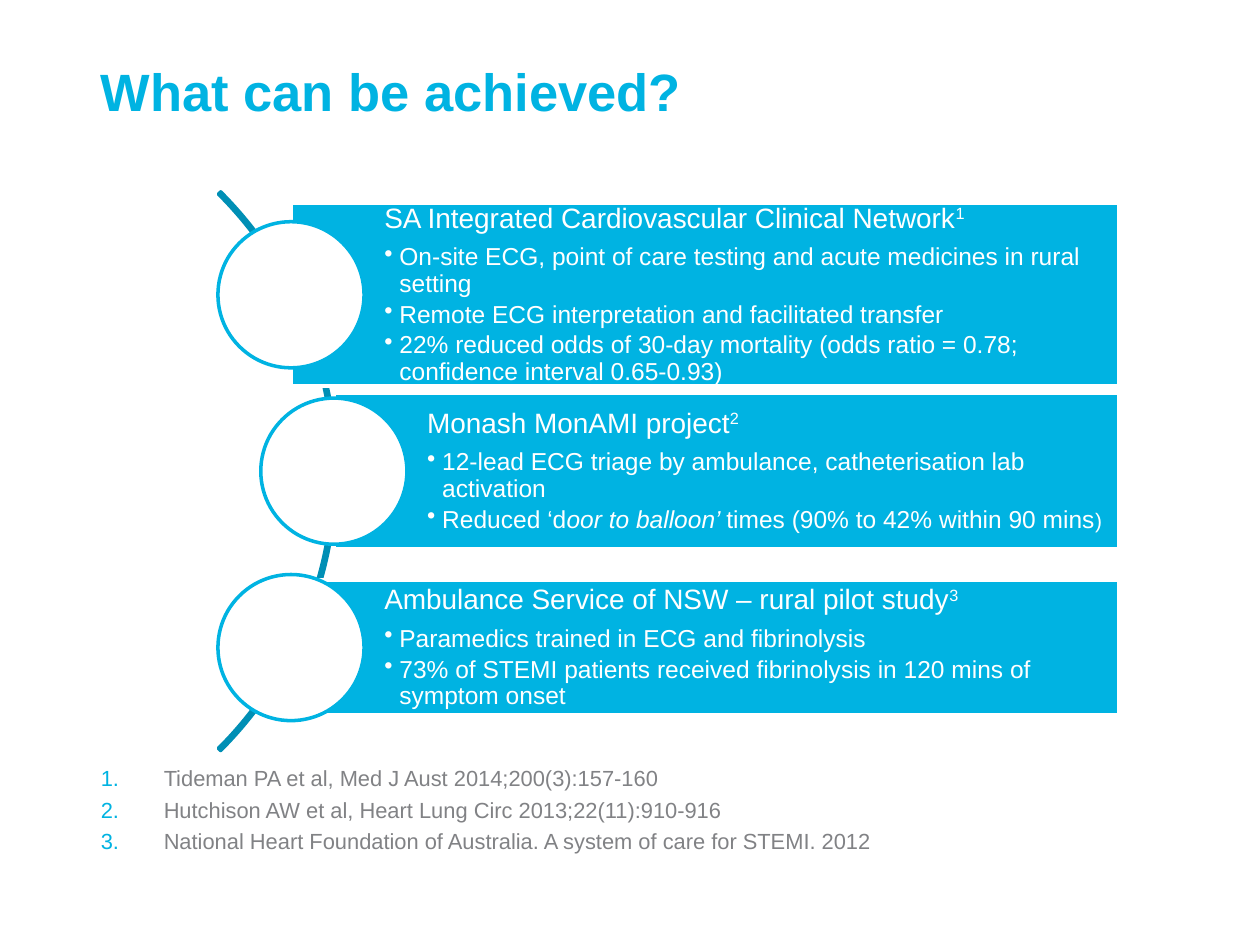
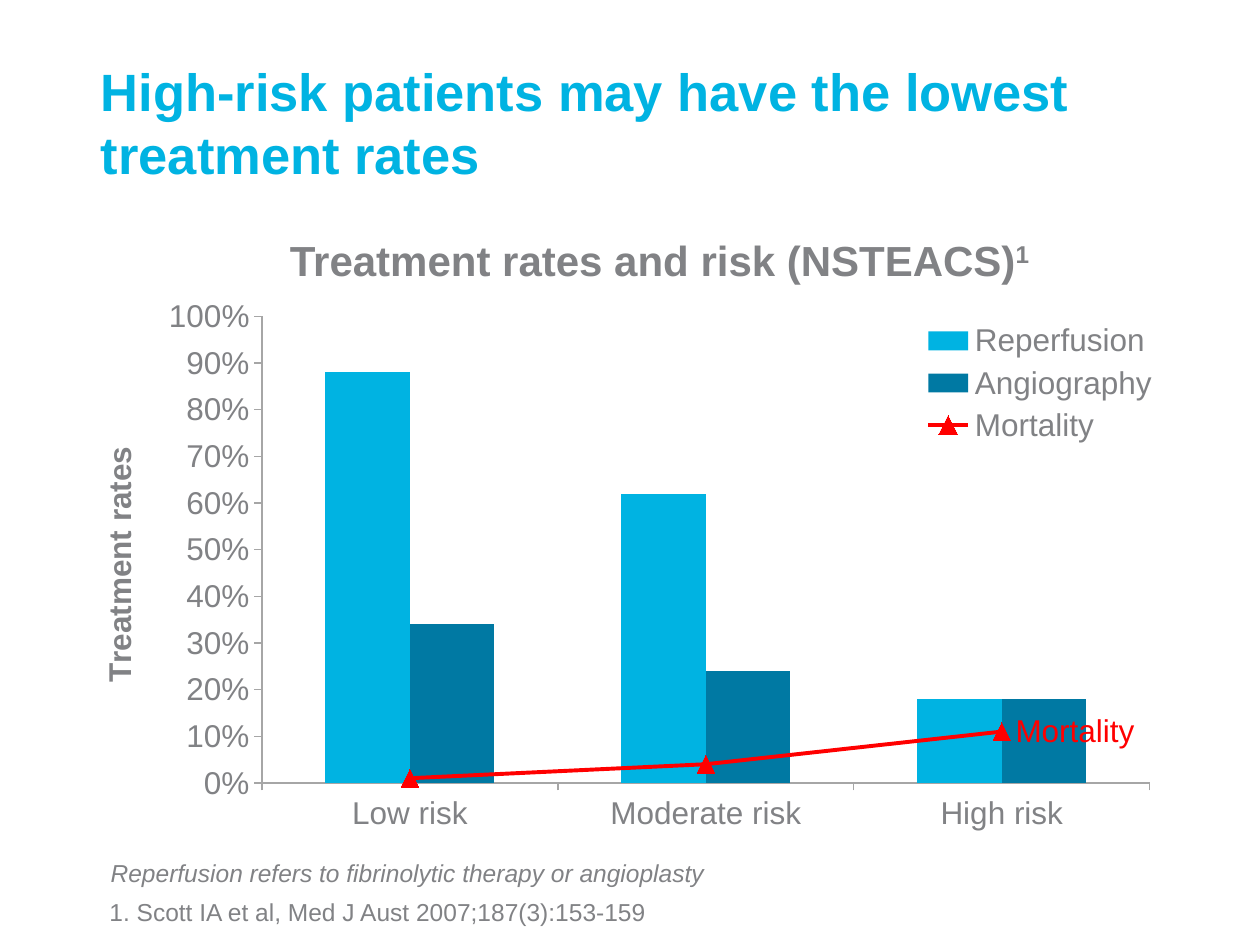
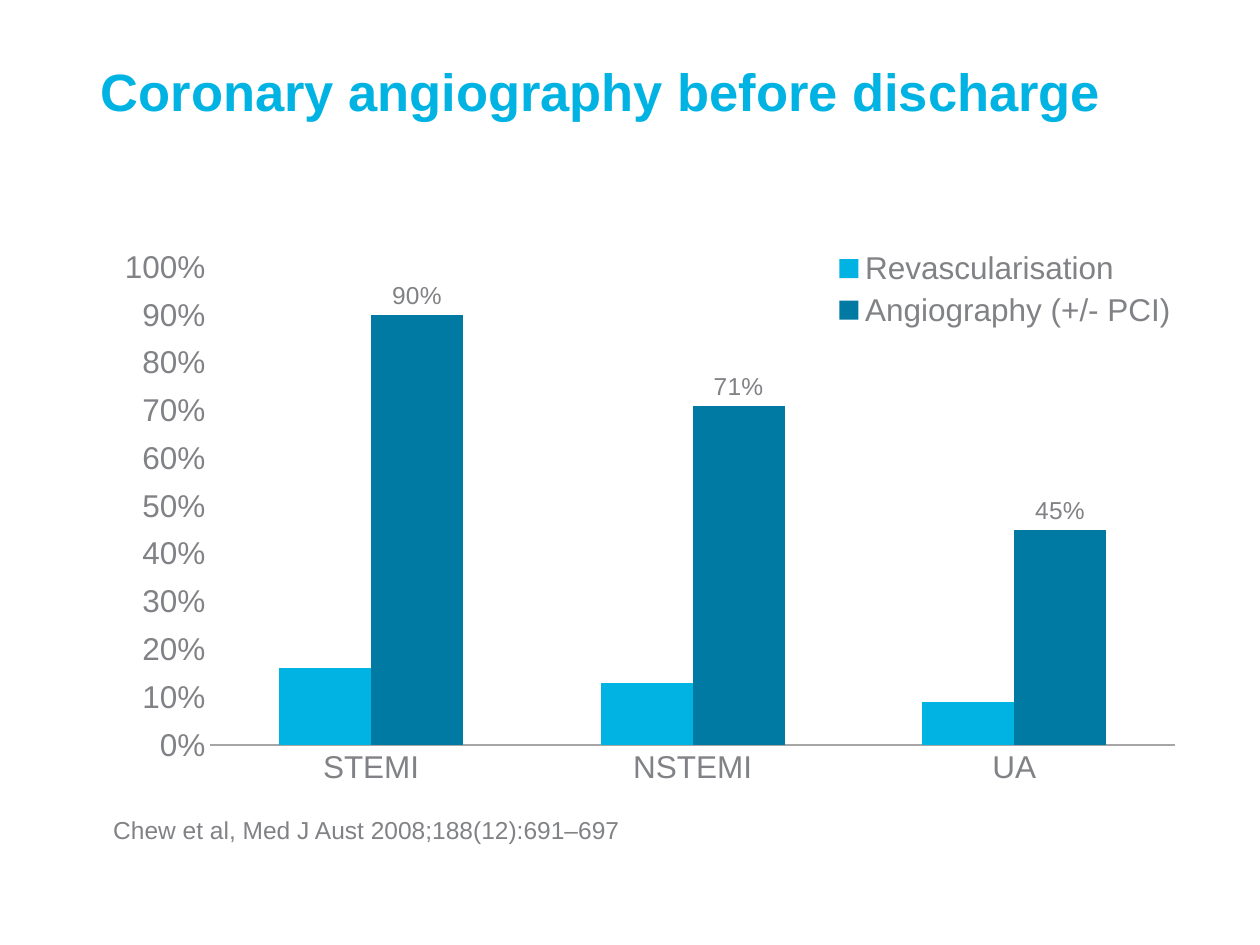
from lxml.etree import SubElement
from pptx import Presentation
from pptx.chart.data import CategoryChartData
from pptx.dml.color import RGBColor
from pptx.enum.chart import XL_CHART_TYPE, XL_LABEL_POSITION as LABEL, XL_LEGEND_POSITION
from pptx.enum.chart import XL_MARKER_STYLE, XL_TICK_MARK as TICK
from pptx.enum.shapes import MSO_SHAPE as SHAPE
from pptx.enum.text import MSO_ANCHOR as ANCHOR, PP_ALIGN as ALIGN
from pptx.oxml import parse_xml
from pptx.oxml.ns import nsdecls, qn
from pptx.util import Inches, Pt

CYAN = RGBColor(0x00, 0xB3, 0xE2)
TEAL = RGBColor(0x00, 0x8F, 0xB5)
NAVY = RGBColor(0x00, 0x79, 0xA3)
GREY = RGBColor(0x81, 0x82, 0x85)
RULE = RGBColor(0xA6, 0xA6, 0xA6)
RED = RGBColor(0xFF, 0x00, 0x00)
WHITE = RGBColor(0xFF, 0xFF, 0xFF)
FONT = "Arial"
LEFT, WIDTH = 0.8, 8.7


def add_run(p, text, size, color=GREY, raised=False, **fmt):
    r = p.add_run()
    r.text = text
    r.font.name, r.font.size = FONT, Pt(size)
    r.font.color.rgb = color
    for name, value in fmt.items():
        setattr(r.font, name, value)
    if raised:
        r.font._element.set("baseline", "30000")


def add_text_frame(s, x, y, w, h, inset=(0.1, 0.05, 0.1, 0.05)):
    tf = s.shapes.add_textbox(Inches(x), Inches(y), Inches(w), Inches(h)).text_frame
    tf.word_wrap = True
    for side, gap in zip(("left", "top", "right", "bottom"), inset):
        setattr(tf, f"margin_{side}", Inches(gap))
    return tf


prs = Presentation()
prs.slide_width, prs.slide_height = Inches(10), Inches(7.5)

titles = ["What can be achieved?",
          "High-risk patients may have the lowest treatment rates",
          "Coronary angiography before discharge"]
slides = []
for title in titles:
    s = prs.slides.add_slide(prs.slide_layouts[6])
    p = add_text_frame(s, LEFT, 0.47, WIDTH, 1.08, (0, 0, 0, 0)).paragraphs[0]
    p.line_spacing = Pt(36)
    add_run(p, title, 30, CYAN, bold=True)
    slides.append(s)
achieved, risk, discharge = slides

# Slide 1: three programmes along an arc
ARC_X, ARC_SIZE = -3.6, 6.27
MIDDLE, PITCH = 3.74, 1.4
CIRCLE, PANEL_RIGHT = 1.16, 8.88

arc = achieved.shapes.add_shape(SHAPE.BLOCK_ARC, Inches(ARC_X), Inches(MIDDLE - ARC_SIZE / 2),
                                Inches(ARC_SIZE), Inches(ARC_SIZE))
for i, value in enumerate((189, 27, 0.004)):
    arc.adjustments[i] = value
arc.shadow.inherit = False
arc.fill.background()
arc.line.color.rgb, arc.line.width = TEAL, Pt(2)

# circle centre, panel height, heading, bullets as lists of (text, size, format)
programmes = [
    (2.31, 1.45, "SA Integrated Cardiovascular Clinical Network", [
        [("On-site ECG, point of care testing and acute medicines in rural setting", 14, {})],
        [("Remote ECG interpretation and facilitated transfer", 14, {})],
        [("22% reduced odds of 30-day mortality (odds ratio = 0.78; "
          "confidence interval 0.65-0.93)", 14, {})]]),
    (2.65, 1.23, "Monash MonAMI project", [
        [("12-lead ECG triage by ambulance, catheterisation lab activation", 14, {})],
        [("Reduced ‘d", 14, {}), ("oor to balloon’ ", 14, {"italic": True}),
         ("times (90% to 42% within 90 mins", 14, {}), (")", 12, {})]]),
    (2.31, 1.07, "Ambulance Service of NSW – rural pilot study", [
        [("Paramedics trained in ECG and fibrinolysis", 14, {})],
        [("73% of STEMI patients received fibrinolysis in 120 mins of symptom onset", 14, {})]]),
]
for i, (x, height, heading, bullets) in enumerate(programmes):
    y = MIDDLE + (i - 1) * PITCH
    panel = achieved.shapes.add_shape(SHAPE.RECTANGLE, Inches(x), Inches(y - height / 2),
                                      Inches(PANEL_RIGHT - x), Inches(height))
    circle = achieved.shapes.add_shape(SHAPE.OVAL, Inches(x - CIRCLE / 2), Inches(y - CIRCLE / 2),
                                       Inches(CIRCLE), Inches(CIRCLE))
    for sp, fill, line in ((panel, CYAN, WHITE), (circle, WHITE, CYAN)):
        sp.shadow.inherit = False
        sp.fill.solid()
        sp.fill.fore_color.rgb = fill
        sp.line.color.rgb, sp.line.width = line, Pt(2)

    tf = panel.text_frame
    tf.word_wrap, tf.vertical_anchor = True, ANCHOR.MIDDLE
    tf.margin_left = Inches(0.74)
    tf.margin_top = tf.margin_right = tf.margin_bottom = Inches(0.04)
    p = tf.paragraphs[0]
    p.alignment, p.line_spacing, p.space_after = ALIGN.LEFT, 0.9, Pt(6)
    add_run(p, heading, 16, WHITE)
    add_run(p, str(i + 1), 16, WHITE, raised=True)
    for bullet in bullets:
        p = tf.add_paragraph()
        p.alignment, p.line_spacing, p.space_after = ALIGN.LEFT, 0.9, Pt(2.5)
        pPr = p._p.get_or_add_pPr()
        pPr.set("marL", str(Inches(0.12)))
        pPr.set("indent", str(-Inches(0.12)))
        SubElement(pPr, qn("a:buChar")).set("char", "•")
        for text, size, fmt in bullet:
            add_run(p, text, size, WHITE, **fmt)

references = ["Tideman PA et al, Med J Aust 2014;200(3):157-160",
              "Hutchison AW et al, Heart Lung Circ 2013;22(11):910-916",
              "National Heart Foundation of Australia. A system of care for STEMI. 2012"]
tf = add_text_frame(achieved, LEFT, 6.07, WIDTH, 0.63, (0, 0, 0, 0))
for i, reference in enumerate(references):
    p = tf.add_paragraph() if i else tf.paragraphs[0]
    p.space_before = Pt(3 if i else 0)
    pPr = p._p.get_or_add_pPr()
    pPr.set("marL", str(Inches(0.5)))
    pPr.set("indent", str(-Inches(0.5)))
    SubElement(SubElement(pPr, qn("a:buClr")), qn("a:srgbClr")).set("val", str(CYAN))
    SubElement(pPr, qn("a:buAutoNum")).set("type", "arabicPeriod")
    add_run(p, reference, 12.5)

# Slides 2 and 3: column charts; plot and legend boxes are shares of the chart
chart_specs = [
    dict(slide=risk, x=0.6, y=2.29, tick=TICK.OUTSIDE,
         cats=["Low risk", "Moderate risk", "High risk"],
         series={"Reperfusion": (0.88, 0.62, 0.18), "Angiography": (0.34, 0.24, 0.18),
                 "Mortality": (0.01, 0.04, 0.11)},
         plot=(0.17, 0.05, 0.81, 0.84), legend=(0.77, 0.05, 0.22, 0.24)),
    dict(slide=discharge, x=LEFT, y=1.9, tick=TICK.NONE,
         cats=["STEMI", "NSTEMI", "UA"],
         series={"Revascularisation": (0.16, 0.13, 0.09),
                 "Angiography (+/- PCI)": (0.9, 0.71, 0.45)},
         plot=(0.1, 0.05, 0.88, 0.86), legend=(0.66, 0.01, 0.33, 0.16)),
]
charts = []
for spec in chart_specs:
    data = CategoryChartData(number_format="0%")
    data.categories = spec["cats"]
    for name, values in spec["series"].items():
        data.add_series(name, values)
    chart = spec["slide"].shapes.add_chart(
        XL_CHART_TYPE.COLUMN_CLUSTERED, Inches(spec["x"]), Inches(spec["y"]),
        Inches(WIDTH), Inches(4.41), data).chart
    chart.font.name, chart.font.size = FONT, Pt(18)
    chart.font.color.rgb = GREY
    chart.has_title = False
    chart.has_legend = True
    chart.legend.position = XL_LEGEND_POSITION.RIGHT
    chart.legend.include_in_layout = True

    plot = chart.plots[0]
    plot.gap_width, plot.vary_by_categories = 150, False
    for series, color in zip(plot.series, (CYAN, NAVY)):
        series.format.fill.solid()
        series.format.fill.fore_color.rgb = color
    for axis in (chart.category_axis, chart.value_axis):
        axis.major_tick_mark, axis.minor_tick_mark = spec["tick"], TICK.NONE
        axis.format.line.color.rgb = RULE
    axis = chart.value_axis
    axis.has_major_gridlines = False
    axis.minimum_scale, axis.maximum_scale, axis.major_unit = 0, 1, 0.1
    axis.tick_labels.number_format = "0%"
    axis.tick_labels.number_format_is_linked = False

    for tag, index, target in (("plotArea", 0, "<c:layoutTarget val='inner'/>"), ("legend", 1, "")):
        parent = chart.element.xpath(f"c:chart/c:{tag}")[0]
        for old in parent.findall(qn("c:layout")):
            parent.remove(old)
        box = spec["plot" if tag == "plotArea" else "legend"]
        modes = "".join(f"<c:{d}Mode val='edge'/>" for d in "xy")
        sizes = "".join(f"<c:{d} val='{v}'/>" for d, v in zip("xywh", box))
        parent.insert(index, parse_xml(f"<c:layout {nsdecls('c')}><c:manualLayout>{target}{modes}"
                                       f"{sizes}</c:manualLayout></c:layout>"))
    charts.append(chart)
risk_chart, discharge_chart = charts

# Mortality becomes a line on the same axes
bars = risk_chart.element.xpath(".//c:barChart")[0]
mortality = bars.findall(qn("c:ser"))[2]
for old in mortality.findall(qn("c:invertIfNegative")):
    mortality.remove(old)
lines = parse_xml(f"<c:lineChart {nsdecls('c')}><c:grouping val='stacked'/>"
                  "<c:varyColors val='0'/><c:marker val='1'/></c:lineChart>")
lines.insert(2, mortality)
for ax_id in bars.findall(qn("c:axId")):
    SubElement(lines, qn("c:axId")).set("val", ax_id.get("val"))
bars.addnext(lines)

series = risk_chart.plots[1].series[0]
series.smooth = False
series.format.line.color.rgb, series.format.line.width = RED, Pt(2.25)
series.marker.style, series.marker.size = XL_MARKER_STYLE.TRIANGLE, 10
series.marker.format.fill.solid()
series.marker.format.fill.fore_color.rgb = RED
series.marker.format.line.color.rgb = RED
series.data_labels.show_value = False
label = series.points[2].data_label
add_run(label.text_frame.paragraphs[0], "Mortality", 18, RED)
label.position = LABEL.RIGHT

title = risk_chart.value_axis.axis_title
add_run(title.text_frame.paragraphs[0], "Treatment rates", 18, bold=True)
risk_chart.element.xpath(".//c:valAx/c:title//a:bodyPr")[0].set("rot", "-5400000")

discharge_chart.value_axis.format.line.fill.background()
labels = discharge_chart.plots[0].series[1].data_labels
labels.show_value, labels.position = True, LABEL.OUTSIDE_END
labels.number_format, labels.number_format_is_linked = "0%", False
labels.font.size, labels.font.name = Pt(14), FONT
labels.font.color.rgb = GREY

# Chart heading and notes
p = add_text_frame(risk, LEFT, 1.81, 8.87, 0.5).paragraphs[0]
p.alignment = ALIGN.CENTER
add_run(p, "Treatment rates and risk (NSTEACS)", 24, bold=True)
add_run(p, "1", 24, bold=True, raised=True)

notes = [
    (risk, 0.78, 6.76, "Reperfusion refers to fibrinolytic therapy or angioplasty", True),
    (risk, 0.77, 7.07, "1. Scott IA et al, Med J Aust 2007;187(3):153-159", False),
    (discharge, LEFT, 6.42, "Chew et al, Med J Aust 2008;188(12):691–697", False),
]
for s, x, y, text, italic in notes:
    add_run(add_text_frame(s, x, y, WIDTH, 0.34).paragraphs[0], text, 14, italic=italic)

prs.save("out.pptx")
